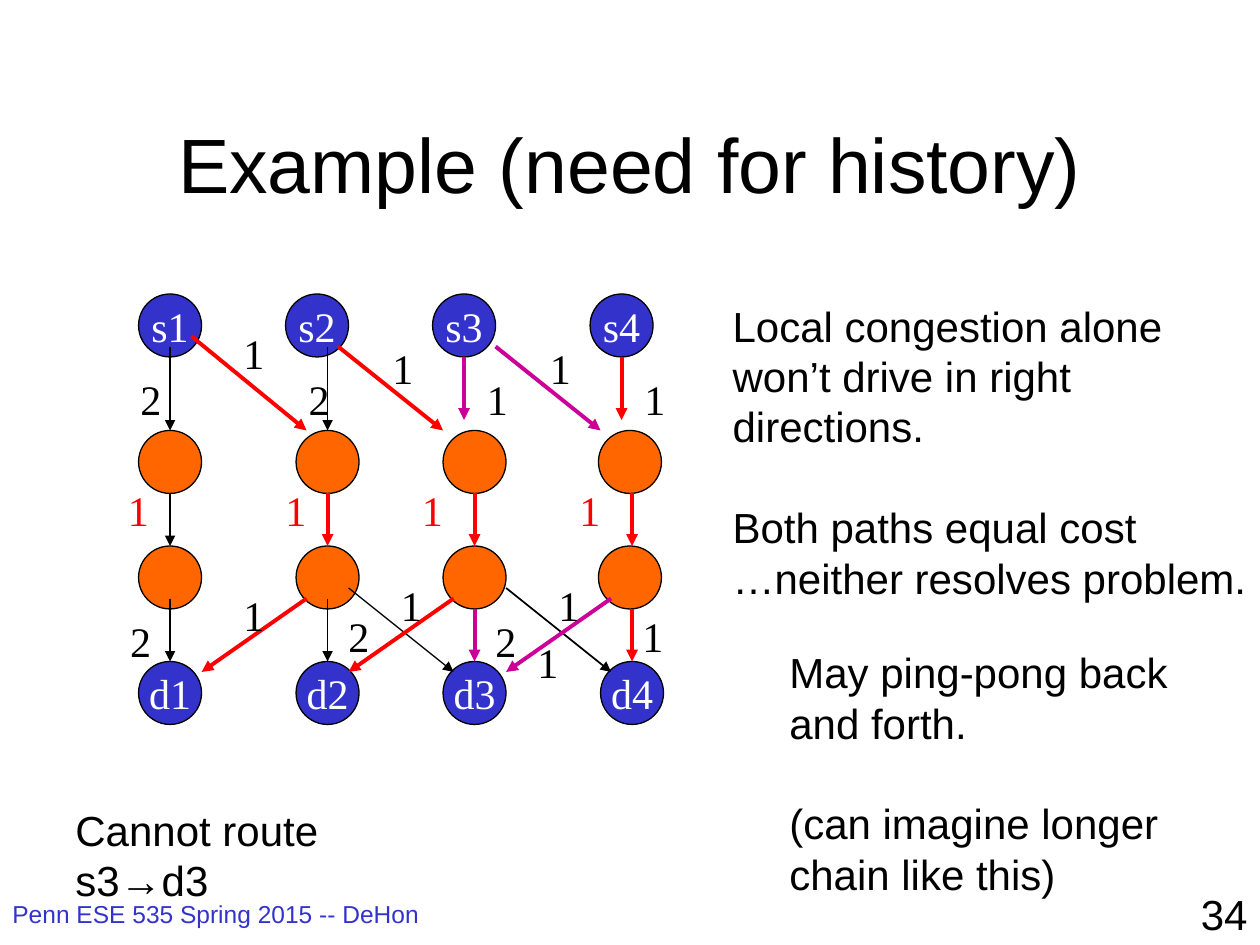
from dataclasses import dataclass

from lxml import etree
from pptx import Presentation
from pptx.dml.color import RGBColor
from pptx.enum.shapes import MSO_CONNECTOR, MSO_SHAPE
from pptx.enum.text import MSO_ANCHOR, PP_ALIGN
from pptx.oxml.ns import qn
from pptx.util import Emu, Pt

STRAIGHT = MSO_CONNECTOR.STRAIGHT
ELLIPSE = MSO_SHAPE.OVAL
MIDDLE = MSO_ANCHOR.MIDDLE
LEFT, CENTER, RIGHT = PP_ALIGN.LEFT, PP_ALIGN.CENTER, PP_ALIGN.RIGHT

PX = 914400 // 120  # 120 px to the inch
NODE = 60
THIN, THICK = 0.75, 2.25
LINE_PITCH = 28.8
SANS, SERIF = "Arial", "Times New Roman"
COLORS = {
    "black": "000000",
    "white": "FFFFFF",
    "blue": "3333CC",
    "orange": "FF6600",
    "red": "FF0000",
    "purple": "CC0099",
}


@dataclass
class NodeRow:
    top: int
    lefts: tuple[int, ...]
    fill: str
    prefix: str = ""


@dataclass
class Edge:
    x1: int
    y1: int
    x2: int
    y2: int
    color: str = "black"
    width: float = THIN


@dataclass
class Cost:
    text: str
    left: int
    top: int
    color: str = "black"


@dataclass
class Note:
    lines: tuple[str, ...]
    left: int
    top: int
    width: int
    height: int
    size: int = 24
    color: str = "black"
    align: PP_ALIGN = LEFT
    gap_before: int = -1  # index of the line that follows a one-line gap


NODE_ROWS = (
    NodeRow(280, (132, 272, 412, 562), "blue", "s"),
    NodeRow(410, (132, 282, 422, 570), "orange"),
    NodeRow(520, (132, 282, 422, 570), "orange"),
    NodeRow(630, (132, 282, 422, 572), "blue", "d"),
)
EDGES = (
    # Sources to first switches
    Edge(162, 330, 162, 410),
    Edge(312, 330, 312, 410),
    Edge(442, 340, 442, 400, "purple", THICK),
    Edge(592, 340, 592, 400, "red", THICK),
    Edge(182, 320, 292, 410, "red", THICK),
    Edge(322, 330, 422, 410, "red", THICK),
    Edge(472, 330, 572, 410, "purple", THICK),
    # First to second switches
    Edge(162, 470, 162, 520),
    *(Edge(x, 470, x, 520, "red", THICK) for x in (312, 452, 602)),
    # Second switches to destinations
    Edge(162, 570, 162, 630),
    Edge(312, 570, 312, 630),
    Edge(452, 580, 452, 630, "purple", THICK),
    Edge(602, 580, 602, 630, "red", THICK),
    Edge(332, 560, 432, 640),
    Edge(482, 560, 582, 640, width=1),
    Edge(292, 570, 192, 640, "red", THICK),
    Edge(432, 570, 332, 640, "red", THICK),
    Edge(582, 570, 482, 640, "purple", THICK),
)
COSTS = (
    Cost("2", 122, 350), Cost("2", 282, 350),
    Cost("1", 452, 350), Cost("1", 602, 350),
    Cost("1", 220, 306), Cost("1", 362, 320), Cost("1", 512, 320),
    *(Cost("1", left, 456, "red") for left in (110, 260, 390, 540)),
    Cost("2", 112, 580), Cost("2", 320, 576),
    Cost("2", 460, 580), Cost("1", 600, 576),
    Cost("1", 220, 556), Cost("1", 370, 546),
    Cost("1", 520, 546), Cost("1", 500, 600),
)
NOTES = (
    Note(("Local congestion alone", "won’t drive in right", "directions.",
          "Both paths equal cost", "…neither resolves problem."),
         686, 280, 514, 300, gap_before=3),
    Note(("May ping-pong back", "and forth.",
          "(can imagine longer", "chain like this)"),
         740, 610, 396, 252, gap_before=2),
    Note(("Penn ESE 535 Spring 2015 -- DeHon",), 0, 850, 460, 50, 14, "blue"),
    Note(("34",), 950, 840, 250, 60, align=RIGHT),
)


def px(*lengths: int) -> list[Emu]:
    return [Emu(length * PX) for length in lengths]


def rgb(name: str) -> RGBColor:
    return RGBColor.from_string(COLORS[name])


def style(para, size: float, font: str, color: str, align=LEFT) -> None:
    para.alignment = align
    para.font.size = Pt(size)
    para.font.name = font
    para.font.color.rgb = rgb(color)


def draw_node(page, row: NodeRow, number: int, left: int) -> None:
    node = page.shapes.add_shape(ELLIPSE, *px(left, row.top, NODE, NODE))
    node.shadow.inherit = False
    node.fill.solid()
    node.fill.fore_color.rgb = rgb(row.fill)
    node.line.color.rgb = rgb("black")
    node.line.width = Pt(THIN)
    if row.prefix:
        frame = node.text_frame
        frame.word_wrap = False
        frame.vertical_anchor = MIDDLE
        frame.text = f"{row.prefix}{number}"
        style(frame.paragraphs[0], 24, SERIF, "white", CENTER)


def draw_edge(page, edge: Edge) -> None:
    arrow = page.shapes.add_connector(
        STRAIGHT, *px(edge.x1, edge.y1, edge.x2, edge.y2))
    arrow.line.color.rgb = rgb(edge.color)
    arrow.line.width = Pt(edge.width)
    etree.SubElement(arrow.line._get_or_add_ln(), qn("a:tailEnd"), type="triangle")
    etree.SubElement(arrow._element.spPr, qn("a:effectLst"))


def draw_cost(page, cost: Cost) -> None:
    box = page.shapes.add_textbox(*px(cost.left, cost.top, 44, 60))
    box.text_frame.text = cost.text
    style(box.text_frame.paragraphs[0], 24, SERIF, cost.color)


def draw_note(page, note: Note):
    box = page.shapes.add_textbox(*px(note.left, note.top, note.width, note.height))
    frame = box.text_frame
    frame.word_wrap = len(note.lines) == 1
    frame.text = "\n".join(note.lines)
    for index, para in enumerate(frame.paragraphs):
        style(para, note.size, SANS, note.color, note.align)
        if note.size == 24:
            para.line_spacing = Pt(LINE_PITCH)
        if index == note.gap_before:
            para.space_before = Pt(LINE_PITCH)
    return box


def main() -> None:
    deck = Presentation()
    deck.slide_width, deck.slide_height = px(1200, 900)
    page = deck.slides.add_slide(deck.slide_layouts[5])

    # Title
    title = page.shapes.title
    title.left, title.top, title.width, title.height = px(90, 80, 1020, 150)
    title.text_frame.text = "Example (need for history)"
    title.text_frame.vertical_anchor = MIDDLE
    style(title.text_frame.paragraphs[0], 44, SANS, "black", CENTER)

    # Routing network
    for row in NODE_ROWS:
        for number, left in enumerate(row.lefts, start=1):
            draw_node(page, row, number, left)
    for edge in EDGES:
        draw_edge(page, edge)
    for cost in COSTS:
        draw_cost(page, cost)

    # Remarks, footer and page number
    for note in NOTES:
        draw_note(page, note)

    # Caption, whose wide right margin wraps it onto two lines
    caption = draw_note(page, Note(("Cannot route s3→d3",), 60, 760, 392, 60))
    caption.text_frame.margin_right = px(100)[0]

    deck.save("out.pptx")


if __name__ == "__main__":
    main()
